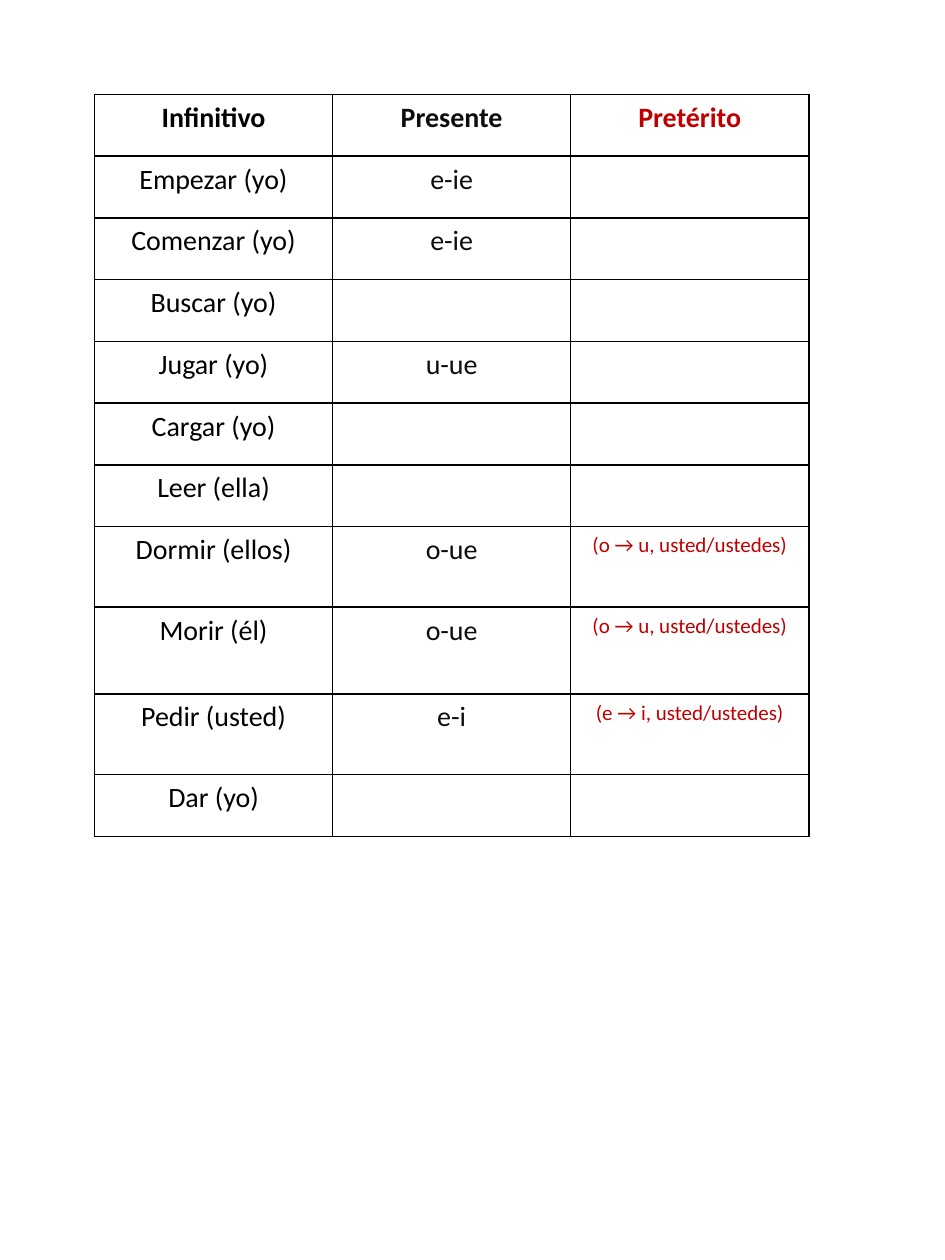
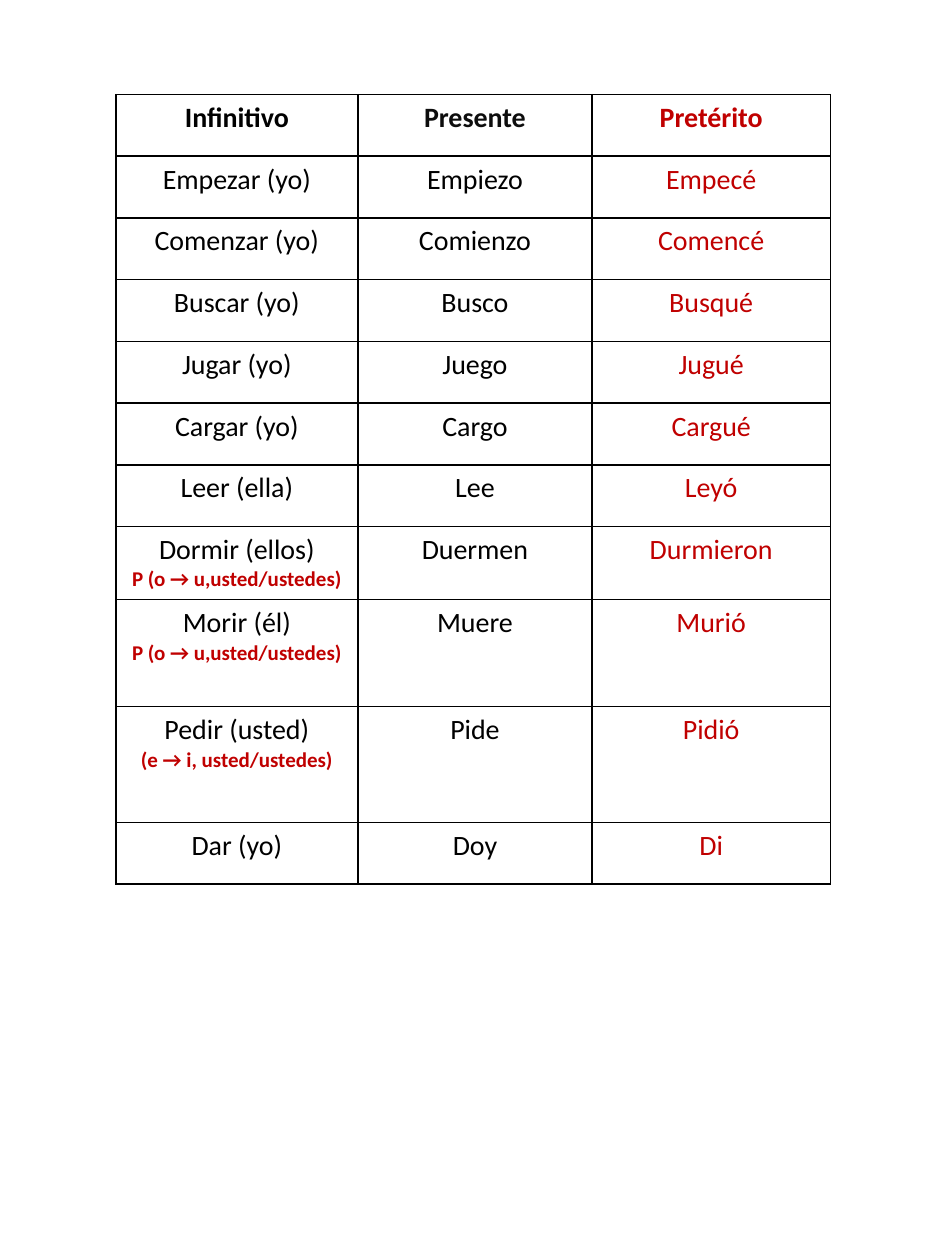
import pptx
import pptx.util
import pptx.dml.color
import pptx.enum.text
import pptx.oxml.ns
from lxml import etree

Inches = pptx.util.Inches
Pt = pptx.util.Pt

FONT = "Calibri"
BLACK, SOFT_BLACK, RED = "000000", "0D0D0D", "C00000"
BODY_SIZE, NOTE_SIZE = 16, 12
ROW_HEIGHT = 0.49
TABLE_TOP = 0.75
HEADINGS = ["Infinitivo", "Presente", "Pretérito"]
HEADING_COLOURS = [BLACK, SOFT_BLACK, RED]

VERBS = ["Empezar (yo)", "Comenzar (yo)", "Buscar (yo)", "Jugar (yo)", "Cargar (yo)",
         "Leer (ella)", "Dormir (ellos)", "Morir (él)", "Pedir (usted)", "Dar (yo)"]
STEM_CHANGES = ["e-ie", "e-ie", "", "u-ue", "", "", "o-ue", "o-ue", "e-i", ""]
PRESENT = ["Empiezo", "Comienzo", "Busco", "Juego", "Cargo",
           "Lee", "Duermen", "Muere", "Pide", "Doy"]
PRETERITE = ["Empecé", "Comencé", "Busqué", "Jugué", "Cargué",
             "Leyó", "Durmieron", "Murió", "Pidió", "Di"]
EXERCISE_HINTS = {"Dormir (ellos)": "(o → u, usted/ustedes)",
                  "Morir (él)": "(o → u, usted/ustedes)",
                  "Pedir (usted)": "(e → i, usted/ustedes)"}
ANSWER_HINTS = {"Dormir (ellos)": "P (o → u,usted/ustedes)",
                "Morir (él)": "P (o → u,usted/ustedes)",
                "Pedir (usted)": "(e → i, usted/ustedes)"}


def rgb(hex_colour):
    """Turn a hex string into a colour."""
    return pptx.dml.color.RGBColor.from_string(hex_colour)


def write_line(paragraph, text, colour, size=BODY_SIZE, bold=False):
    """Write one centred line of text."""
    paragraph.text = text
    paragraph.alignment = pptx.enum.text.PP_ALIGN.CENTER
    for run in paragraph.runs:
        run.font.name = FONT
        run.font.size = Pt(size)
        run.font.bold = bold
        run.font.color.rgb = rgb(colour)


def outline_cell(cell):
    """Clear the fill of a cell and rule its four sides."""
    properties = cell._tc.get_or_add_tcPr()
    for side in ("a:lnL", "a:lnR", "a:lnT", "a:lnB"):
        border = etree.SubElement(properties, pptx.oxml.ns.qn(side), w=str(Pt(1)))
        fill = etree.SubElement(border, pptx.oxml.ns.qn("a:solidFill"))
        etree.SubElement(fill, pptx.oxml.ns.qn("a:srgbClr"), val=BLACK)
    cell.fill.background()


def add_verb_table(slide, left, widths, tall_rows, forms, colours):
    """Add a ruled verb table with its headings and forms."""
    heights = [tall_rows.get(verb, ROW_HEIGHT) for verb in ["", *VERBS]]
    table = slide.shapes.add_table(len(heights), len(widths), Inches(left), Inches(TABLE_TOP),
                                   Inches(sum(widths)), Inches(sum(heights))).table
    table.first_row = False
    table.horz_banding = False
    for column, width in zip(table.columns, widths):
        column.width = Inches(width)
    for row, height in zip(table.rows, heights):
        row.height = Inches(height)
    for cell in table.iter_cells():
        outline_cell(cell)
    for column, heading in enumerate(HEADINGS):
        write_line(table.cell(0, column).text_frame.paragraphs[0], heading,
                   HEADING_COLOURS[column], bold=True)
    for row, entries in enumerate(zip(*forms), start=1):
        for column, entry in enumerate(entries):
            if entry:
                write_line(table.cell(row, column).text_frame.paragraphs[0], entry,
                           colours[column])
    return table


def build_exercise(slide):
    """Build the table to be filled in, with hints under the preterite."""
    table = add_verb_table(
        slide, 0.75, [1.89, 1.89, 1.89],
        {"Dormir (ellos)": 0.64, "Morir (él)": 0.69, "Pedir (usted)": 0.64},
        [VERBS, STEM_CHANGES, [""] * len(VERBS)], HEADING_COLOURS)
    for verb, hint in EXERCISE_HINTS.items():
        cell = table.cell(VERBS.index(verb) + 1, 2)
        write_line(cell.text_frame.paragraphs[0], hint, RED, NOTE_SIZE)


def build_answers(slide):
    """Build the completed table, with hints under the infinitives."""
    table = add_verb_table(
        slide, 0.92, [1.92, 1.86, 1.89],
        {"Dormir (ellos)": 0.58, "Morir (él)": 0.85, "Pedir (usted)": 0.92},
        [VERBS, PRESENT, PRETERITE], [BLACK, BLACK, RED])
    for verb, hint in ANSWER_HINTS.items():
        cell = table.cell(VERBS.index(verb) + 1, 0)
        write_line(cell.text_frame.add_paragraph(), hint, RED, NOTE_SIZE, bold=True)


def main():
    """Build and save the presentation."""
    presentation = pptx.Presentation()
    presentation.slide_width = Inches(7.5)
    presentation.slide_height = Inches(10)
    blank_layout = presentation.slide_layouts[6]
    for build in (build_exercise, build_answers):
        build(presentation.slides.add_slide(blank_layout))
    presentation.save("out.pptx")


if __name__ == "__main__":
    main()
